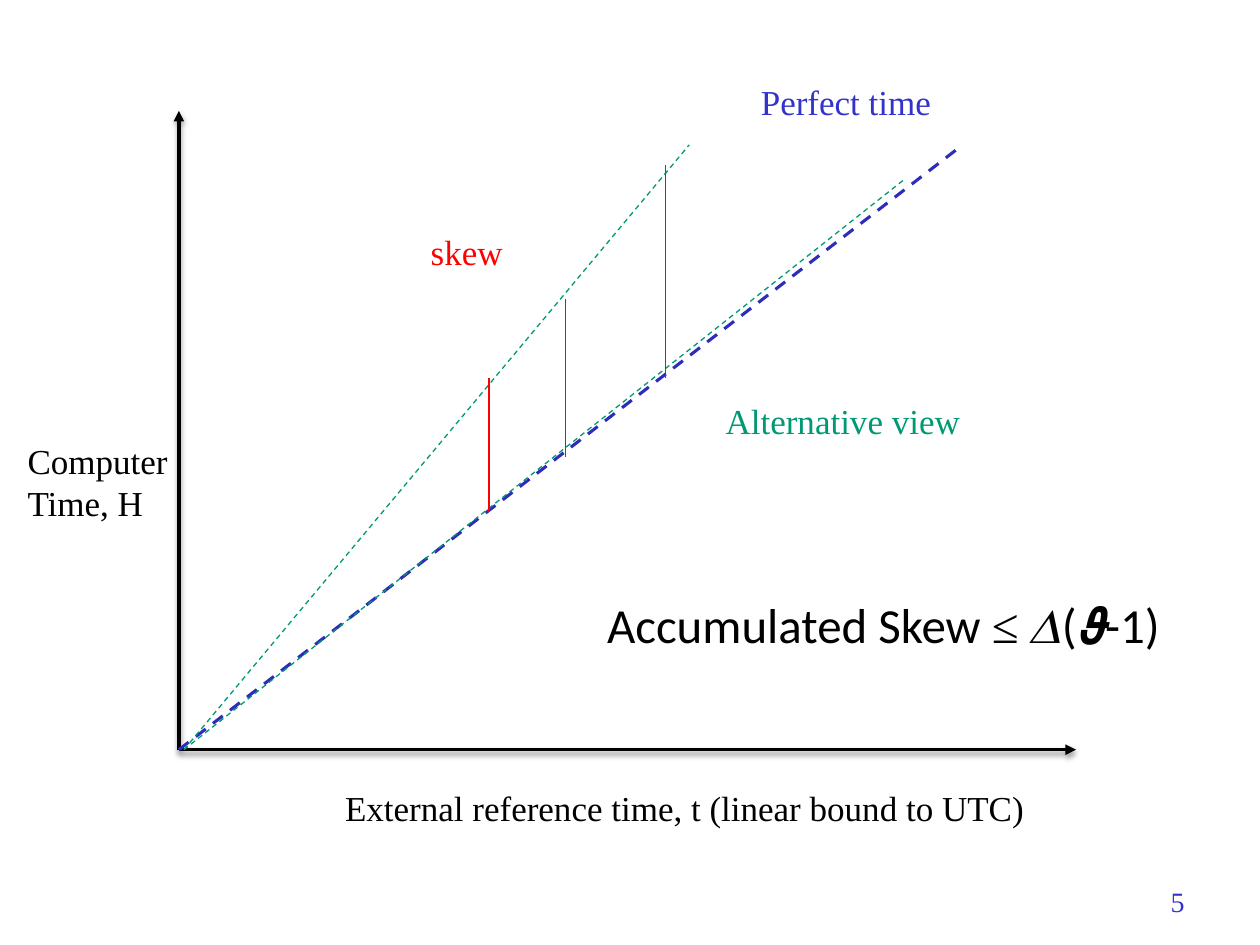
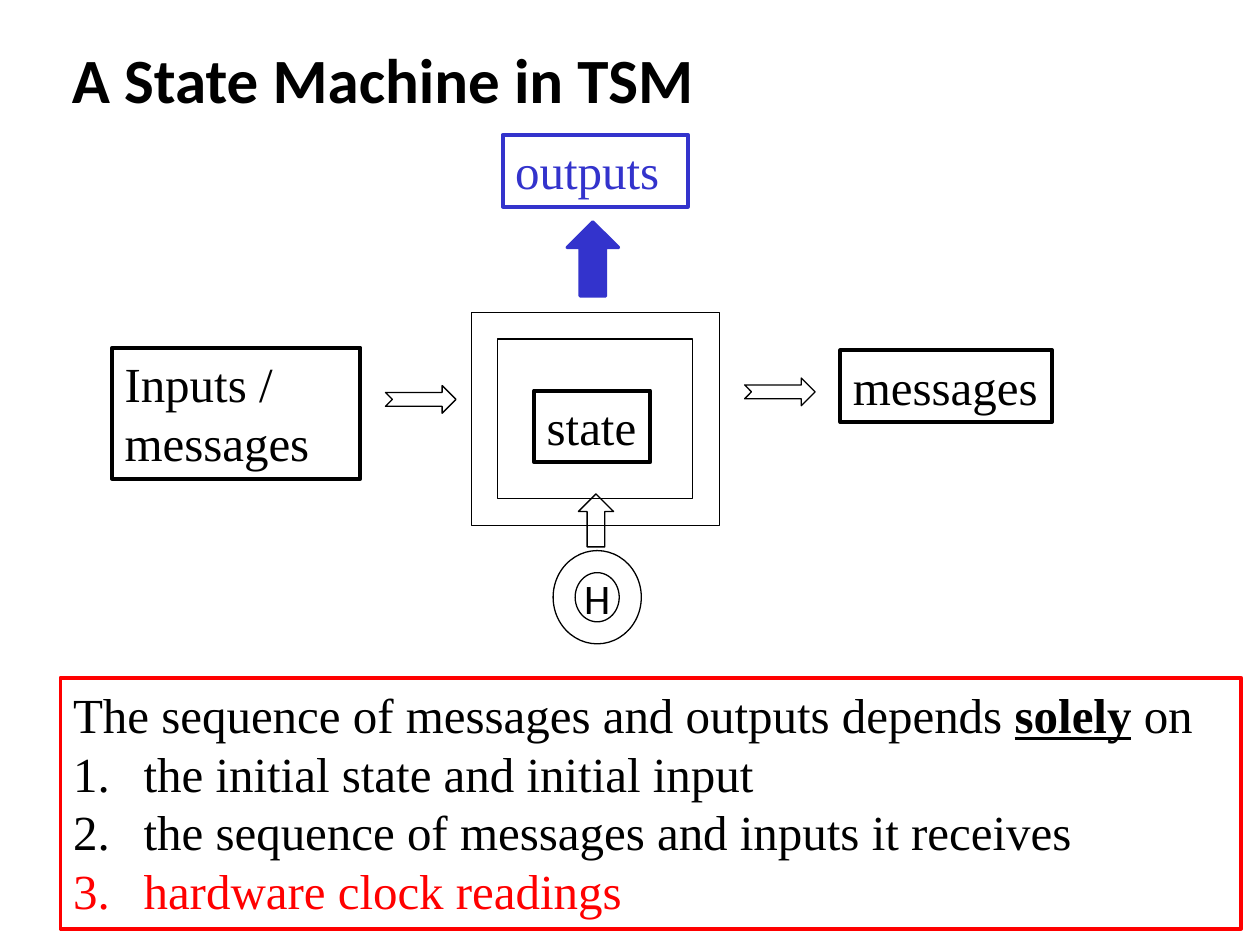
from dataclasses import dataclass
from typing import Any, NamedTuple, Optional

from lxml.etree import SubElement
from pptx import Presentation
from pptx.dml.color import RGBColor
from pptx.enum.dml import MSO_LINE
from pptx.enum.shapes import MSO_CONNECTOR, MSO_SHAPE
from pptx.enum.text import MSO_ANCHOR, MSO_AUTO_SIZE, PP_ALIGN
from pptx.oxml.ns import qn
from pptx.util import Inches, Length, Pt

BLACK = RGBColor(0x00, 0x00, 0x00)
BLUE = RGBColor(0x33, 0x33, 0xCC)
DARK_BLUE = RGBColor(0x2D, 0x2D, 0xB9)
GREEN = RGBColor(0x00, 0x99, 0x73)
RED = RGBColor(0xFF, 0x00, 0x00)

SERIF, SANS = "Times New Roman", "Calibri"
SLIDE_WIDTH, SLIDE_HEIGHT = Inches(10), Inches(7.5)
COLUMNS, ROWS = 100, 75
TITLE_AND_CONTENT, BLANK = 1, 6
ORIGIN_ROW = 59.5
LIST_INDENT = 5.6


class Area(NamedTuple):
    """A rectangle in grid columns and rows."""

    left: float
    top: float
    width: float
    height: float


class Run(NamedTuple):
    """Text with the font values that differ from its block."""

    text: str
    font: dict[str, Any] = {}


class Paragraph(NamedTuple):
    """Runs that share one line, numbered or plain."""

    runs: tuple[Run, ...]
    numbered: bool = False


@dataclass(frozen=True)
class Style:
    """The look of a block of text."""

    size: float = 20
    color: RGBColor = BLACK
    font: str = SERIF
    bold: bool = False
    align: PP_ALIGN = PP_ALIGN.LEFT
    anchor: MSO_ANCHOR = MSO_ANCHOR.TOP
    wrap: bool = False


@dataclass(frozen=True)
class Label:
    """Free text at a place on the grid."""

    area: Area
    paragraphs: tuple[Paragraph, ...]
    style: Style = Style()


@dataclass(frozen=True)
class Stroke:
    """A straight line between two grid points."""

    start: tuple[float, float]
    end: tuple[float, float]
    color: RGBColor = RED
    width: float = 0.75
    dashed: bool = False
    axis: bool = False


@dataclass(frozen=True)
class Node:
    """An outlined preset shape, with text if it has any."""

    kind: MSO_SHAPE
    area: Area
    color: RGBColor = BLACK
    width: float = 0.75
    filled: bool = False
    paragraphs: tuple[Paragraph, ...] = ()
    style: Style = Style()


def column(count: float) -> Length:
    """Turn grid columns into a length."""
    return Length(round(SLIDE_WIDTH * count / COLUMNS))


def row(count: float) -> Length:
    """Turn grid rows into a length."""
    return Length(round(SLIDE_HEIGHT * count / ROWS))


def box(area: Area) -> tuple[Length, Length, Length, Length]:
    """Turn an area into left, top, width and height."""
    return column(area.left), row(area.top), column(area.width), row(area.height)


def lines(*texts: str) -> tuple[Paragraph, ...]:
    """Make one plain paragraph of each text."""
    return tuple(Paragraph((Run(text),)) for text in texts)


def apply(target: Any, values: dict[str, Any]) -> None:
    """Set each attribute of the target."""
    for name, value in values.items():
        setattr(target, name, value)


def set_numbering(p: Any, numbered: bool) -> None:
    """Give a paragraph a number and hanging indent, or neither."""
    properties = p._p.get_or_add_pPr()
    indent = column(LIST_INDENT) if numbered else 0
    properties.set("marL", str(indent))
    properties.set("indent", str(-indent))
    if numbered:
        SubElement(properties, qn("a:buFont"), typeface="+mj-lt")
        SubElement(properties, qn("a:buAutoNum"), type="arabicPeriod")
    else:
        SubElement(properties, qn("a:buNone"))


def write(tf: Any, paragraphs: tuple[Paragraph, ...], style: Style) -> None:
    """Fill a text frame with formatted paragraphs."""
    apply(tf, {"word_wrap": style.wrap, "auto_size": MSO_AUTO_SIZE.NONE,
               "vertical_anchor": style.anchor})
    base = {"name": style.font, "size": Pt(style.size), "bold": style.bold}
    for index, paragraph in enumerate(paragraphs):
        p = tf.add_paragraph() if index else tf.paragraphs[0]
        apply(p, {"alignment": style.align, "space_before": Pt(0)})
        set_numbering(p, paragraph.numbered)
        for run in paragraph.runs:
            r = p.add_run()
            r.text = run.text
            values = base | run.font
            r.font.color.rgb = values.pop("color", style.color)
            apply(r.font, values)


def outline(line: Any, color: RGBColor, width: float) -> None:
    """Colour a line and set its width in points."""
    line.color.rgb = color
    line.width = Pt(width)


def draw_label(s: Any, label: Label) -> None:
    """Add a text box."""
    write(s.shapes.add_textbox(*box(label.area)).text_frame, label.paragraphs, label.style)


def draw_stroke(s: Any, stroke: Stroke) -> None:
    """Add a line, with arrowhead and shadow on an axis."""
    (x1, y1), (x2, y2) = stroke.start, stroke.end
    connector = s.shapes.add_connector(
        MSO_CONNECTOR.STRAIGHT, column(x1), row(y1), column(x2), row(y2))
    outline(connector.line, stroke.color, stroke.width)
    if stroke.dashed:
        connector.line.dash_style = MSO_LINE.DASH
    properties = connector.element.spPr
    effects = SubElement(properties, qn("a:effectLst"))
    if stroke.axis:
        SubElement(properties.find(qn("a:ln")), qn("a:tailEnd"), type="triangle")
        shadow = SubElement(effects, qn("a:outerShdw"), blurRad=str(Pt(3.1)),
                            dist=str(Pt(1.6)), dir="5400000", rotWithShape="0")
        tint = SubElement(shadow, qn("a:srgbClr"), val=str(BLACK))
        SubElement(tint, qn("a:alpha"), val="38000")


def draw_node(s: Any, node: Node) -> None:
    """Add an outlined shape."""
    shape = s.shapes.add_shape(node.kind, *box(node.area))
    shape.shadow.inherit = False
    outline(shape.line, node.color, node.width)
    if node.filled:
        shape.fill.solid()
        shape.fill.fore_color.rgb = node.color
    else:
        shape.fill.background()
    if node.paragraphs:
        write(shape.text_frame, node.paragraphs, node.style)


def place(placeholder: Any, area: Area, paragraphs: tuple[Paragraph, ...], style: Style) -> None:
    """Move a placeholder and fill it."""
    apply(placeholder, dict(zip(("left", "top", "width", "height"), box(area))))
    write(placeholder.text_frame, paragraphs, style)


def caption_box(area: Area, *texts: str, color: RGBColor = BLACK, wrap: bool = True) -> Node:
    """Describe a heavy box around large text."""
    return Node(MSO_SHAPE.RECTANGLE, area, color, 2.25, paragraphs=lines(*texts),
                style=Style(28, color, wrap=wrap))


def build_skew_graph(prs: Any) -> None:
    """Draw clock time against reference time."""
    s = prs.slides.add_slide(prs.slide_layouts[BLANK])
    origin, drift_start = (14.2, ORIGIN_ROW), (14.6, ORIGIN_ROW)
    strokes = [
        Stroke(origin, (85.4, ORIGIN_ROW), BLACK, 2, axis=True),
        Stroke(origin, (14.2, 8.8), BLACK, 2, axis=True),
        Stroke(origin, (76.4, 11.5), DARK_BLUE, 1.75, dashed=True),
        *(Stroke(drift_start, end, GREEN, dashed=True) for end in ((71.7, 14.3), (54.7, 11.5))),
        *(Stroke((x, top), (x, bottom))
          for x, top, bottom in ((44.9, 23.7, 36.3), (52.8, 13.1, 30), (38.8, 30, 40.6))),
    ]
    for stroke in strokes:
        draw_stroke(s, stroke)
    bound = (Run("Accumulated Skew "), Run("≤", {"name": SERIF}), Run(" 𝛥(𝟅-1)"))
    labels = [
        Label(Area(71.7, 69.5, 23.3, 4), lines("5"),
              Style(16, BLUE, align=PP_ALIGN.RIGHT, anchor=MSO_ANCHOR.MIDDLE, wrap=True)),
        Label(Area(1.2, 34.4, 18.1, 7.7), lines("Computer", "Time, H"), Style(wrap=True)),
        Label(Area(26.4, 61.9, 56.3, 4.4),
              lines("External reference time, t (linear bound to UTC)")),
        Label(Area(59.4, 5.9, 15.6, 4.4), lines("Perfect time"), Style(color=BLUE)),
        Label(Area(56.6, 31.2, 20.8, 4.4), lines("Alternative view"), Style(color=GREEN)),
        Label(Area(33.2, 17.8, 7.8, 4.4), lines("skew"), Style(color=RED)),
        Label(Area(47.2, 46.7, 46.7, 5.7), (Paragraph(bound),), Style(28, font=SANS)),
    ]
    for label in labels:
        draw_label(s, label)


def build_state_machine(prs: Any) -> None:
    """Draw the state machine and what it depends on."""
    s = prs.slides.add_slide(prs.slide_layouts[TITLE_AND_CONTENT])
    place(s.shapes.title, Area(4.7, 2.5, 91.9, 7.5), lines("A State Machine in TSM"),
          Style(36, font=SANS, bold=True, anchor=MSO_ANCHOR.MIDDLE, wrap=True))
    nodes = [
        Node(MSO_SHAPE.FRAME, Area(37.4, 24.8, 19.7, 16.9)),
        *(Node(MSO_SHAPE.NOTCHED_RIGHT_ARROW, Area(left, top, 5.6, 2.2))
          for left, top in ((30.6, 30.6), (59.1, 30))),
        Node(MSO_SHAPE.UP_ARROW, Area(45, 17.6, 4.1, 5.9), BLUE, 1.75, filled=True),
        caption_box(Area(8.9, 27.6, 19.7, 10.4), "Inputs /", "messages"),
        caption_box(Area(66.7, 27.8, 16.8, 5.7), "messages"),
        caption_box(Area(39.9, 10.7, 14.7, 5.7), "outputs", color=BLUE),
        caption_box(Area(42.4, 31, 9.2, 5.7), "state", wrap=False),
        Node(MSO_SHAPE.DONUT, Area(43.9, 43.7, 7, 7.4), paragraphs=lines("H"),
             style=Style(24, font=SANS, align=PP_ALIGN.CENTER, anchor=MSO_ANCHOR.MIDDLE)),
        Node(MSO_SHAPE.UP_ARROW, Area(45.9, 39.2, 2.8, 4.2)),
    ]
    for node in nodes:
        draw_node(s, node)
    dependencies = (
        Run("the initial state and initial input"),
        Run("the sequence of messages and inputs it receives"),
        Run("hardware clock readings", {"color": RED}),
    )
    lead = (Run("The sequence of messages and outputs depends "),
            Run("solely", {"bold": True, "underline": True}), Run(" on"))
    body = s.placeholders[1]
    place(body, Area(4.8, 53.8, 93.7, 19.9),
          (Paragraph(lead), *(Paragraph((run,), numbered=True) for run in dependencies)),
          Style(28, wrap=True))
    outline(body.line, RED, 2.25)


def main() -> None:
    """Build and save both slides."""
    prs = Presentation()
    apply(prs, {"slide_width": SLIDE_WIDTH, "slide_height": SLIDE_HEIGHT})
    build_skew_graph(prs)
    build_state_machine(prs)
    prs.save("out.pptx")


if __name__ == "__main__":
    main()
